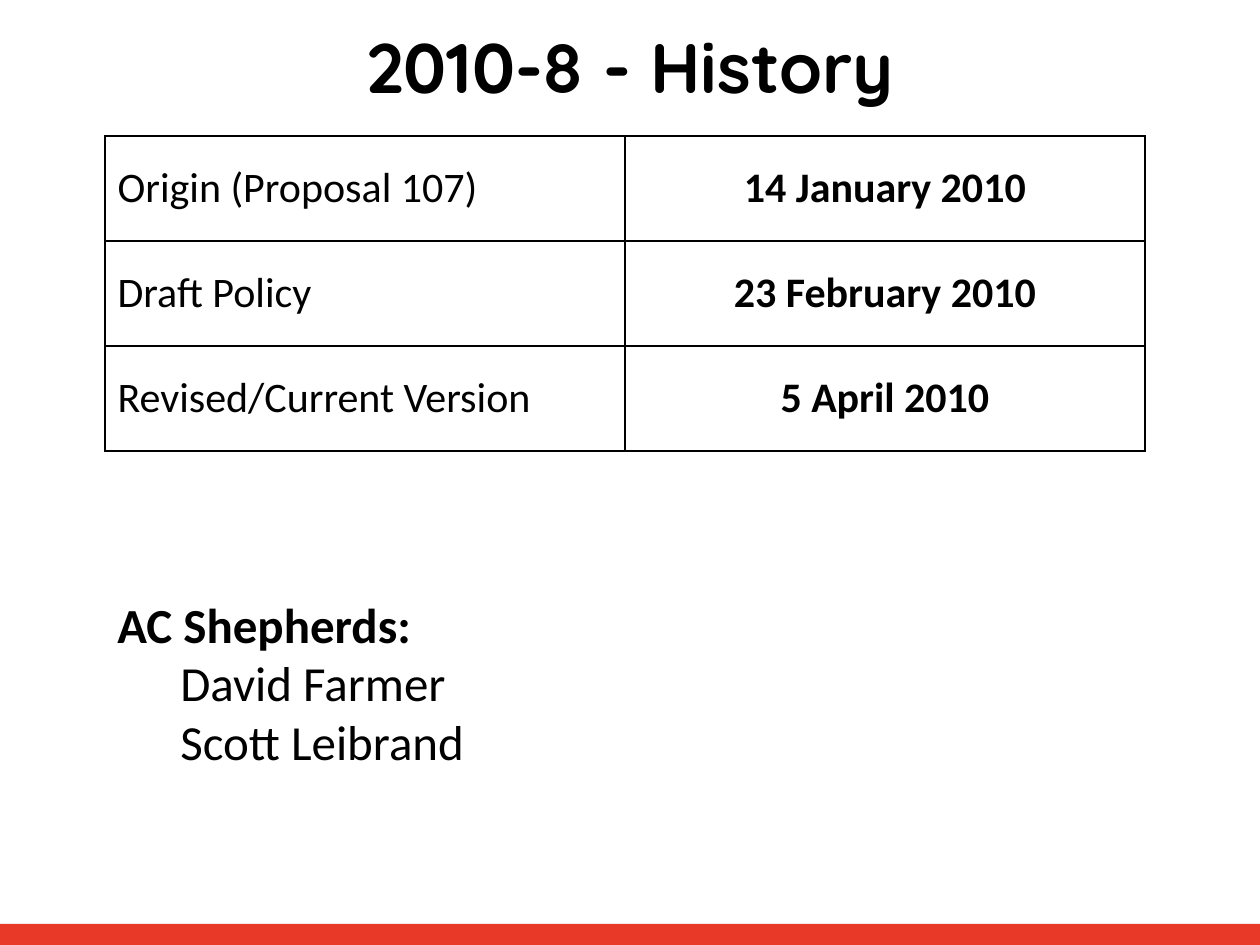
import pptx
import pptx.util
import pptx.dml.color
import pptx.enum.shapes
import pptx.enum.text
import pptx.oxml
import pptx.oxml.ns

PX = 9144000 // 1260  # EMU per px, 126 px to the inch
BLACK = pptx.dml.color.RGBColor(0, 0, 0)
WHITE = pptx.dml.color.RGBColor(255, 255, 255)
RED = pptx.dml.color.RGBColor(0xE8, 0x38, 0x28)
MID = pptx.enum.text.MSO_ANCHOR.MIDDLE
LEFT = pptx.enum.text.PP_ALIGN.LEFT
CENTER = pptx.enum.text.PP_ALIGN.CENTER

DATES = [
    ("Origin (Proposal 107)", "14 January 2010"),
    ("Draft Policy", "23 February 2010"),
    ("Revised/Current Version", "5 April 2010"),
]
NAMES = ["David Farmer", "Scott Leibrand"]


def emu(box):
    return [n * PX for n in box]


def write(para, text, size, bold=False, face="Calibri", align=LEFT):
    para.text = text
    para.alignment = align
    font = para.font
    font.name, font.size, font.bold = face, pptx.util.Pt(size), bold
    font.color.rgb = BLACK


def frame(cell):
    """Draw a thin black line on each side of a cell."""
    props = cell._tc.get_or_add_tcPr()
    for i, side in enumerate(("lnL", "lnR", "lnT", "lnB")):
        props.insert(i, pptx.oxml.parse_xml(
            f'<a:{side} {pptx.oxml.ns.nsdecls("a")} w="12700"><a:solidFill>'
            f'<a:srgbClr val="{BLACK}"/></a:solidFill></a:{side}>'))


def add_bar(slide, box):
    kind = pptx.enum.shapes.MSO_SHAPE.RECTANGLE
    bar = slide.shapes.add_shape(kind, *emu(box))
    bar.shadow.inherit = False
    bar.fill.solid()
    bar.fill.fore_color.rgb = RED
    bar.line.fill.background()


def add_title(slide, box, text):
    body = slide.shapes.add_textbox(*emu(box)).text_frame
    body.word_wrap = True
    body.vertical_anchor = MID
    write(body.paragraphs[0], text, 40, True, "Quicksand", CENTER)


def add_dates(slide, box, rows):
    grid = slide.shapes.add_table(len(rows), 2, *emu(box)).table
    grid.first_row = grid.horz_banding = False
    for r, row in enumerate(rows):
        for c, text in enumerate(row):
            cell = grid.cell(r, c)
            cell.fill.solid()
            cell.fill.fore_color.rgb = WHITE
            cell.vertical_anchor = MID
            align = CENTER if c else LEFT
            write(cell.text_frame.paragraphs[0], text, 24, c == 1, align=align)
            frame(cell)


def add_names(slide, box, head, names):
    body = slide.shapes.add_textbox(*emu(box)).text_frame
    body.word_wrap = True
    write(body.paragraphs[0], head, 28, True)
    for name in names:
        para = body.add_paragraph()
        write(para, name, 28)
        para._p.get_or_add_pPr().set("marL", str(63 * PX))


def main():
    deck = pptx.Presentation()
    deck.slide_width, deck.slide_height = emu((1260, 945))
    slide = deck.slides.add_slide(deck.slide_layouts[6])
    add_bar(slide, (0, 924, 1260, 22))
    add_dates(slide, (105, 136, 1040, 315), DATES)
    add_names(slide, (105, 588, 514, 190), "AC Shepherds:", NAMES)
    add_title(slide, (63, 16, 1134, 98), "2010-8 - History")
    deck.save("out.pptx")


if __name__ == "__main__":
    main()
